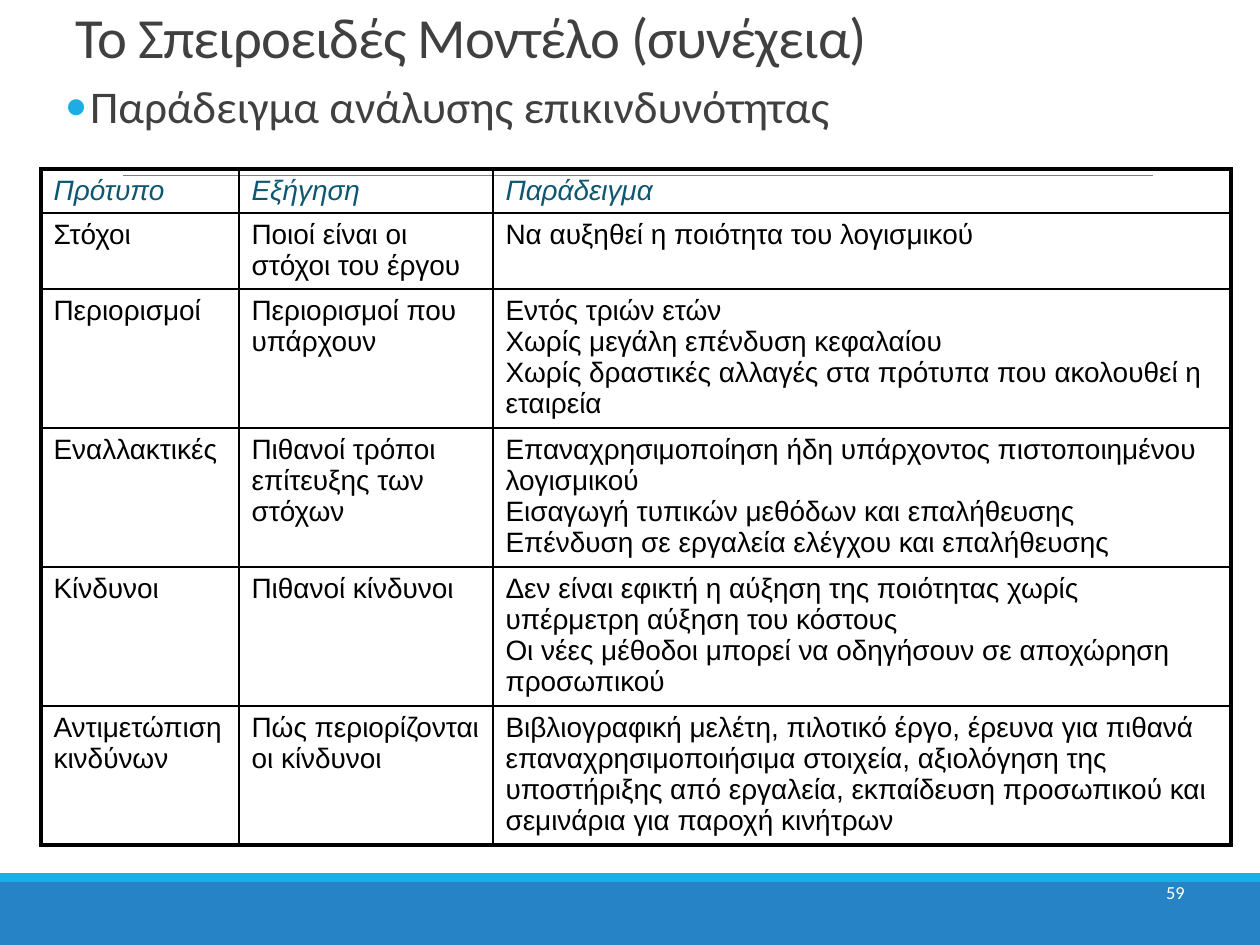
"""Builds the slide on the spiral model with its risk analysis table."""
from lxml.etree import SubElement
from pptx import Presentation
from pptx.dml.color import RGBColor
from pptx.enum.shapes import MSO_CONNECTOR as Connector, MSO_SHAPE as Shape
from pptx.enum.text import MSO_ANCHOR as Anchor, MSO_AUTO_SIZE as AutoSize, PP_ALIGN as Align
from pptx.oxml import parse_xml
from pptx.oxml.ns import nsdecls, qn
from pptx.util import Emu, Inches, Pt

PX = Inches(1) / 126
BLACK = RGBColor(0x00, 0x00, 0x00)
WHITE = RGBColor(0xFF, 0xFF, 0xFF)
CHARCOAL = RGBColor(0x40, 0x40, 0x40)
GRAY = RGBColor(0x80, 0x80, 0x80)
TEAL = RGBColor(0x0E, 0x57, 0x72)
BLUE = RGBColor(0x26, 0x83, 0xC6)
CYAN = RGBColor(0x1C, 0xAD, 0xE4)

COLUMN_WIDTHS = [198, 254, 738]
ROW_HEIGHTS = [44, 76] + [139] * 4
RISK_ROWS = [
    ("Πρότυπο", "Εξήγηση", ["Παράδειγμα"]),
    ("Στόχοι", "Ποιοί είναι οι στόχοι του έργου",
     ["Να αυξηθεί η ποιότητα του λογισμικού"]),
    ("Περιορισμοί", "Περιορισμοί που υπάρχουν",
     ["Εντός τριών ετών",
      "Χωρίς μεγάλη επένδυση κεφαλαίου",
      "Χωρίς δραστικές αλλαγές στα πρότυπα που ακολουθεί η εταιρεία"]),
    ("Εναλλακτικές", "Πιθανοί τρόποι επίτευξης των στόχων",
     ["Επαναχρησιμοποίηση ήδη υπάρχοντος πιστοποιημένου λογισμικού",
      "Εισαγωγή τυπικών μεθόδων και επαλήθευσης",
      "Επένδυση σε εργαλεία ελέγχου και επαλήθευσης"]),
    ("Κίνδυνοι", "Πιθανοί κίνδυνοι",
     ["Δεν είναι εφικτή η αύξηση της ποιότητας χωρίς υπέρμετρη αύξηση του κόστους",
      "Οι νέες μέθοδοι μπορεί να οδηγήσουν σε αποχώρηση προσωπικού"]),
    ("Αντιμετώπιση κινδύνων", "Πώς περιορίζονται οι κίνδυνοι",
     ["Βιβλιογραφική μελέτη, πιλοτικό έργο, έρευνα για πιθανά επαναχρησιμοποιήσιμα "
      "στοιχεία, αξιολόγηση της υποστήριξης από εργαλεία, εκπαίδευση προσωπικού και "
      "σεμινάρια για παροχή κινήτρων"]),
]


def px(length):
    return Emu(round(length * PX))


def place(shape, left, top, width, height):
    shape.left, shape.top = px(left), px(top)
    shape.width, shape.height = px(width), px(height)


def add_run(paragraph, text, size, color, font="Calibri", italic=False):
    run = paragraph.add_run()
    run.text = text
    run.font.size, run.font.name, run.font.italic = Pt(size), font, italic
    run.font.color.rgb = color
    return run


def add_band(slide, top, height, color):
    band = slide.shapes.add_shape(Shape.RECTANGLE, 0, px(top), px(1260), px(height))
    band.shadow.inherit = False
    band.fill.solid()
    band.fill.fore_color.rgb = color
    band.line.fill.background()


def add_rule(slide, left, right, y):
    rule = slide.shapes.add_connector(Connector.STRAIGHT, px(left), px(y), px(right), px(y))
    rule.line.color.rgb = GRAY
    rule.line.width = Pt(0.5)
    SubElement(rule._element.spPr, qn("a:effectLst"))


def fill_title(title, text):
    place(title, 63, 14, 1134, 62)
    frame = title.text_frame
    frame.auto_size, frame.vertical_anchor = AutoSize.NONE, Anchor.BOTTOM
    heading = frame.paragraphs[0]
    heading.alignment, heading.line_spacing = Align.LEFT, 0.85
    run = add_run(heading, text, 32.4, CHARCOAL)
    run.font._element.set("spc", "-50")


def fill_body(body, text):
    place(body, 65, 82, 1163, 59)
    frame = body.text_frame
    frame.auto_size = AutoSize.NONE
    frame.margin_left = frame.margin_right = 0
    item = frame.paragraphs[0]
    item.line_spacing, item.space_before, item.space_after = 0.8, Pt(12), Pt(2)
    add_run(item, text, 25.9, CHARCOAL)
    properties = item._p.get_or_add_pPr()
    properties.set("marL", str(Inches(0.2)))
    properties.set("indent", str(-Inches(0.2)))
    bullet_color = SubElement(properties, qn("a:buClr"))
    SubElement(bullet_color, qn("a:srgbClr"), val=str(CYAN))
    SubElement(properties, qn("a:buFont"), typeface="Calibri")
    SubElement(properties, qn("a:buChar"), char="•")


def set_borders(cell, widths):
    properties = cell._tc.get_or_add_tcPr()
    for index, (side, width) in enumerate(zip("LRTB", widths)):
        properties.insert(index, parse_xml(
            f'<a:ln{side} {nsdecls("a")} w="{Pt(width)}"><a:solidFill>'
            f'<a:srgbClr val="{BLACK}"/></a:solidFill></a:ln{side}>'))


def fill_cell(cell, lines, is_header):
    cell.fill.background()
    frame = cell.text_frame
    for index, line in enumerate(lines):
        paragraph = frame.add_paragraph() if index else frame.paragraphs[0]
        add_run(paragraph, line, 16, TEAL if is_header else BLACK, "Arial", is_header)


def add_risk_table(slide, left, top):
    last_row, last_column = len(ROW_HEIGHTS) - 1, len(COLUMN_WIDTHS) - 1
    table = slide.shapes.add_table(
        len(ROW_HEIGHTS), len(COLUMN_WIDTHS), px(left), px(top),
        px(sum(COLUMN_WIDTHS)), px(sum(ROW_HEIGHTS))).table
    table.first_row = table.horz_banding = False
    for column, width in zip(table.columns, COLUMN_WIDTHS):
        column.width = px(width)
    for row, height in zip(table.rows, ROW_HEIGHTS):
        row.height = px(height)
    for r, (template, meaning, examples) in enumerate(RISK_ROWS):
        for c, lines in enumerate([[template], [meaning], examples]):
            cell = table.cell(r, c)
            fill_cell(cell, lines, r == 0)
            outer = (c == 0, c == last_column, r == 0, r == last_row)
            set_borders(cell, [2.25 if edge else 1 for edge in outer])


def add_page_number(slide, number):
    box = slide.shapes.add_textbox(px(903), px(861), px(294), px(63))
    frame = box.text_frame
    frame.word_wrap, frame.vertical_anchor = True, Anchor.MIDDLE
    frame.paragraphs[0].alignment = Align.RIGHT
    add_run(frame.paragraphs[0], number, 10.5, WHITE)


def main():
    deck = Presentation()
    deck.slide_width, deck.slide_height = px(1260), px(945)
    slide = deck.slides.add_slide(deck.slide_layouts[1])
    add_band(slide, 882, 63, BLUE)
    add_band(slide, 873, 9, CYAN)
    add_rule(slide, 123, 1153, 175)
    fill_title(slide.shapes.title, "Το Σπειροειδές Μοντέλο (συνέχεια)")
    fill_body(slide.placeholders[1], "Παράδειγμα ανάλυσης επικινδυνότητας")
    add_risk_table(slide, 41, 169)
    add_page_number(slide, "59")
    deck.save("out.pptx")


if __name__ == "__main__":
    main()
